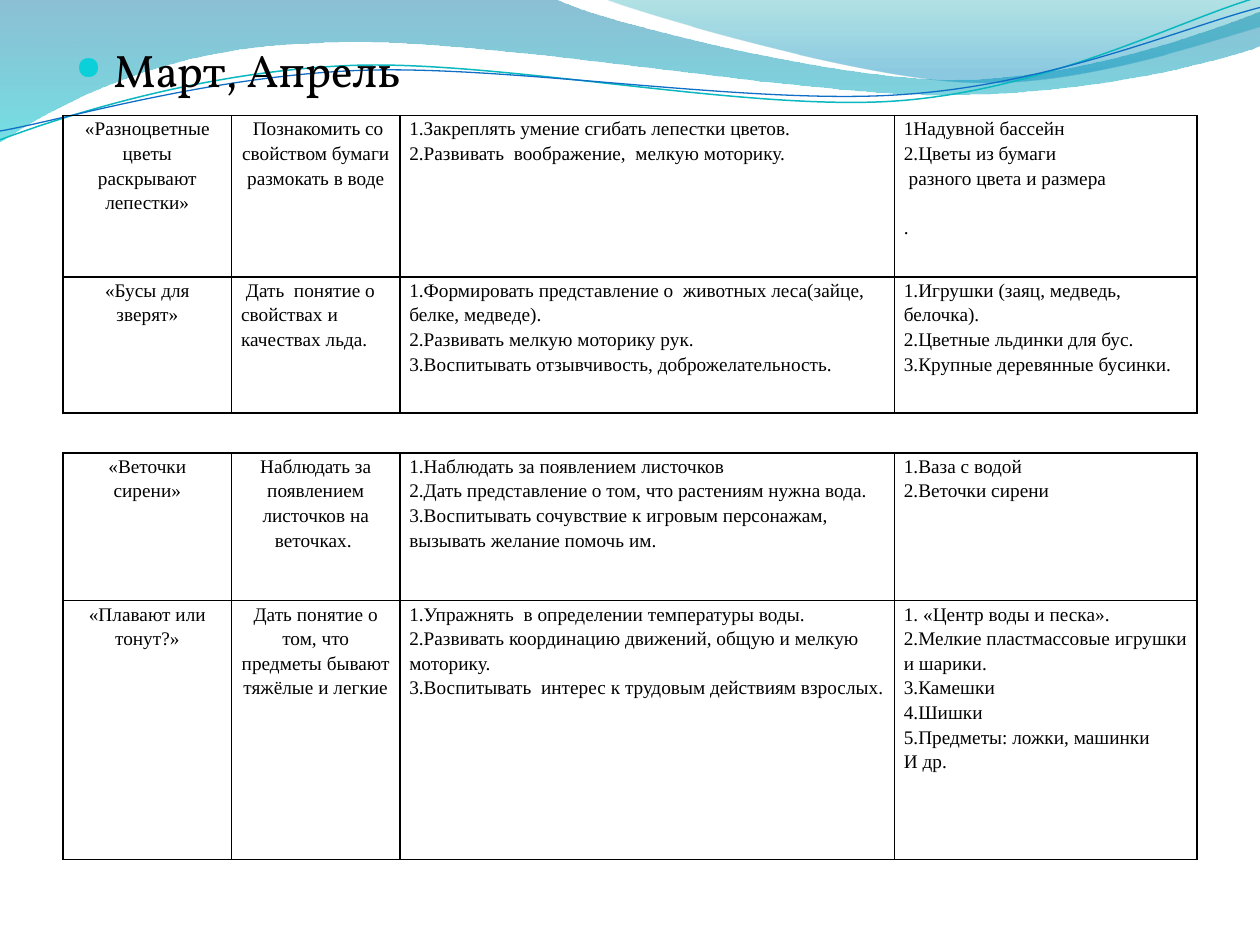
import math

from lxml import etree
from pptx import Presentation
from pptx import util as u
from pptx.dml import color
from pptx.enum import text
from pptx.oxml import ns

COLORS = {
    "text": "000000", "border": "000000", "bullet": "0BD0D9",
    "teal": "0AB8BF", "blue": "0F6FC6",
    "wave_blue": "0074A1", "wave_cyan": "00C6CF",
    "crest_teal": "00A1A9", "crest_blue": "008BBF",
}
INCH = 2.54
LEFT = 1.27
COL_WIDTHS = [3.4, 3.39, 9.97, 6.1]
LINE_PITCH = 14
TILT = -2.7

FILLED_WAVES = [
    ([("L", 0, 0), ("L", 4.4, -0.01),
      ("C", 4.76, 0.17, 6.64, 0.63, 7.58, 0.63),
      ("C", 8.53, 0.63, 9.58, 0.26, 10, 0.09), ("L", 10.01, 0.36),
      ("C", 9.83, 0.44, 8.7, 0.76, 7.46, 0.75),
      ("C", 6.22, 0.75, 3.82, 0.28, 2.57, 0.34),
      ("C", 1.29, 0.36, 0.46, 0.83, -0.01, 1.13)],
     [("wave_blue", 0, 45), ("wave_cyan", 1, 55)]),
    ([("L", 4.79, -0.01),
      ("C", 5.09, 0.11, 6.82, 0.62, 7.69, 0.65),
      ("C", 8.56, 0.69, 9.61, 0.32, 10, 0.21), ("L", 10, 0)],
     [("crest_teal", 0, 30), ("crest_blue", 0.8, 45)]),
]
LINE_WAVES = [
    ([("L", 0, 1.11),
      ("C", 0.48, 0.93, 1.58, 0.57, 2.77, 0.52),
      ("C", 3.95, 0.47, 5.93, 0.89, 7.13, 0.8),
      ("C", 8.33, 0.71, 9.38, 0.15, 9.98, -0.02)], (4.99, 0.57), "teal", 0.85),
    ([("L", 0, 1.04),
      ("C", 0.47, 0.96, 1.64, 0.61, 2.83, 0.56),
      ("C", 4.03, 0.51, 5.97, 0.84, 7.17, 0.75),
      ("C", 8.36, 0.67, 9.41, 0.21, 10, 0.06)], (5, 0.59), "blue", 0.75),
]

SPRING_START = [
    [["«Разноцветные цветы раскрывают лепестки»"],
     [" Познакомить со свойством бумаги размокать в воде"],
     ["1.Закреплять умение сгибать лепестки цветов.",
      "2.Развивать  воображение,  мелкую моторику."],
     ["1Надувной бассейн", "2.Цветы из бумаги",
      " разного цвета и размера", "."]],
    [["«Бусы для зверят»"],
     [" Дать  понятие о свойствах и качествах льда."],
     ["1.Формировать представление о  животных леса(зайце, белке, медведе).",
      "2.Развивать мелкую моторику рук.",
      "3.Воспитывать отзывчивость, доброжелательность."],
     ["1.Игрушки (заяц, медведь, белочка).", "2.Цветные льдинки для бус.",
      "3.Крупные деревянные бусинки."]],
]
SPRING_END = [
    [["«Веточки сирени»"],
     ["Наблюдать за появлением листочков на веточках. "],
     ["1.Наблюдать за появлением листочков",
      "2.Дать представление о том, что растениям нужна вода.",
      "3.Воспитывать сочувствие к игровым персонажам, вызывать желание помочь им."],
     ["1.Ваза с водой", "2.Веточки сирени"]],
    [["«Плавают или тонут?»"],
     ["Дать понятие о том, что предметы бывают тяжёлые и легкие"],
     ["1.Упражнять  в определении температуры воды.",
      "2.Развивать координацию движений, общую и мелкую моторику.",
      "3.Воспитывать  интерес к трудовым действиям взрослых."],
     ["1. «Центр воды и песка».", "2.Мелкие пластмассовые игрушки и шарики.",
      "3.Камешки", "4.Шишки", "5.Предметы: ложки, машинки", "И др."]],
]


def rgb(name):
    return color.RGBColor.from_string(COLORS[name])


def apply(target, **values):
    for name, value in values.items():
        setattr(target, name, value)


def sub(parent, tag, **attrs):
    return etree.SubElement(parent, ns.qn(tag), attrs)


def format_run(r, font, size):
    apply(r.font, name=font, size=u.Pt(size), bold=False)
    r.font.color.rgb = rgb("text")


def turn(x, y, center, degrees):
    a = math.radians(degrees)
    dx, dy = x - center[0], y - center[1]
    return (center[0] + dx * math.cos(a) - dy * math.sin(a),
            center[1] + dx * math.sin(a) + dy * math.cos(a))


def add_wave(slide, path, closed, center=(0, 0), tilt=0):
    points = [turn(x, y, center, -tilt)
              for _, *xy in path for x, y in zip(xy[::2], xy[1::2])]
    start, *rest = [(u.Cm(x * INCH), u.Cm(y * INCH)) for x, y in points]
    builder = slide.shapes.build_freeform(*start)
    builder.add_line_segments(rest, close=closed)
    s = builder.convert_to_shape()
    segments = iter(list(s._element.iter(ns.qn("a:lnTo"))))
    for kind, *_ in path[1:]:
        first = next(segments)
        if kind == "C":
            first.tag = ns.qn("a:cubicBezTo")
            for _ in range(2):
                control = next(segments)
                first.append(control[0])
                control.getparent().remove(control)
    s.rotation = tilt % 360
    s.shadow.inherit = False
    return s


def add_filled_wave(slide, path, stops):
    s = add_wave(slide, path, True)
    s.line.fill.background()
    s.fill.gradient()
    s.fill.gradient_angle = 270
    for stop, (name, position, _) in zip(s.fill.gradient_stops, stops):
        stop.color.rgb = rgb(name)
        stop.position = position
    for clr, (_, _, alpha) in zip(s._element.spPr.iter(ns.qn("a:srgbClr")), stops):
        sub(clr, "a:alpha", val=str(alpha * 1000))


def add_line_wave(slide, path, center, name, width):
    s = add_wave(slide, path, False, center, TILT)
    s.fill.background()
    s.line.color.rgb = rgb(name)
    s.line.width = u.Pt(width)


def add_title(slide, words):
    sp = slide.shapes.title
    slide.shapes._spTree.append(sp._element)
    apply(sp, left=u.Cm(LEFT), top=u.Cm(0.72), width=u.Cm(22.86), height=u.Cm(16.84))
    tf = sp.text_frame
    apply(tf, vertical_anchor=text.MSO_ANCHOR.TOP, auto_size=text.MSO_AUTO_SIZE.NONE,
          word_wrap=True)
    p = tf.paragraphs[0]
    apply(p, alignment=text.PP_ALIGN.LEFT, space_before=u.Pt(5.2))
    r = p.add_run()
    r.text = words
    format_run(r, "Vollkorn", 26)
    pPr = p._p.get_or_add_pPr()
    pPr.set("marL", str(u.Cm(0.76)))
    pPr.set("indent", str(-u.Cm(0.76)))
    sub(sub(pPr, "a:buClr"), "a:srgbClr", val=COLORS["bullet"])
    sub(pPr, "a:buSzPct", val="72000")
    sub(pPr, "a:buChar", char="●")


def add_borders(cell):
    tcPr = cell._tc.get_or_add_tcPr()
    for side in "LRTB":
        ln = sub(tcPr, f"a:ln{side}", w=str(u.Pt(1)))
        sub(sub(ln, "a:solidFill"), "a:srgbClr", val=COLORS["border"])


def fill_cell(cell, lines, centered):
    add_borders(cell)
    cell.fill.background()
    apply(cell, margin_left=u.Cm(0.19), margin_right=u.Cm(0.19),
          margin_top=0, margin_bottom=0)
    tf = cell.text_frame
    for i, line in enumerate(lines):
        p = tf.add_paragraph() if i else tf.paragraphs[0]
        apply(p, line_spacing=1.15,
              alignment=text.PP_ALIGN.CENTER if centered else text.PP_ALIGN.LEFT)
        if line == ".":
            p.space_before = u.Pt(LINE_PITCH)
        r = p.add_run()
        r.text = line
        format_run(r, "Times New Roman", 11)


def add_plan(slide, top, heights, rows, left_aligned=()):
    frame = slide.shapes.add_table(len(rows), len(COL_WIDTHS), u.Cm(LEFT), u.Cm(top),
                                   u.Cm(sum(COL_WIDTHS)), u.Cm(sum(heights)))
    table = frame.table
    apply(table, first_row=False, horz_banding=False)
    for column, width in zip(table.columns, COL_WIDTHS):
        column.width = u.Cm(width)
    for i, (height, row) in enumerate(zip(heights, rows)):
        table.rows[i].height = u.Cm(height)
        for j, lines in enumerate(row):
            fill_cell(table.cell(i, j), lines, j < 2 and (i, j) not in left_aligned)


def main():
    prs = Presentation()
    apply(prs, slide_width=u.Cm(25.4), slide_height=u.Cm(19.05))
    slide = prs.slides.add_slide(prs.slide_layouts[5])
    for wave in FILLED_WAVES:
        add_filled_wave(slide, *wave)
    for wave in LINE_WAVES:
        add_line_wave(slide, *wave)
    add_title(slide, "Март, Апрель")
    add_plan(slide, 2.33, [3.25, 2.75], SPRING_START, left_aligned=[(1, 1)])
    add_plan(slide, 9.13, [2.98, 5.22], SPRING_END)
    prs.save("out.pptx")


if __name__ == "__main__":
    main()
